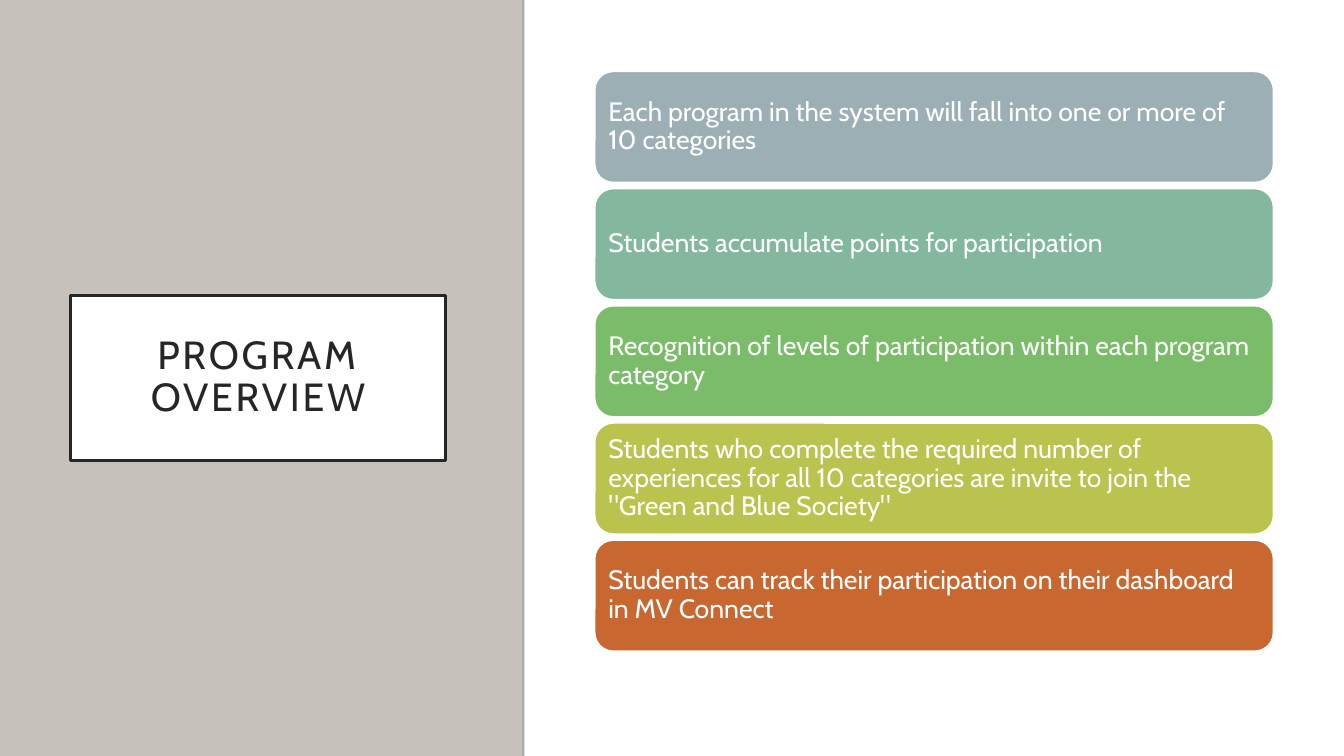
from pptx import Presentation
from pptx.dml.color import RGBColor
from pptx.enum.shapes import MSO_SHAPE as Shape
from pptx.enum.text import MSO_ANCHOR as Anchor, PP_ALIGN as Align
from pptx.util import Inches, Pt

TITLE = "PROGRAM OVERVIEW"
POINTS = [
    ("Each program in the system will fall into one or more of 10 categories", "9BAFB5"),
    ("Students accumulate points for participation", "83B79E"),
    ("Recognition of levels of participation within each program category", "7ABC69"),
    ("Students who complete the required number of experiences for all 10 categories "
     "are invite to join the \"Green and Blue Society\"", "BAC34D"),
    ("Students can track their participation on their dashboard in MV Connect", "C96731"),
]
FONT = "Cabin"
WHITE, INK, TAUPE, SLATE = "FFFFFF", "262626", "C6C1BA", "9BAFB5"

WIDTH, HEIGHT = 13.33, 7.5
SIDE_WIDTH, MAIN_LEFT = 5.18, 5.2
CARD_LEFT, CARD_TOP, CARD_WIDTH, CARD_HEIGHT = 5.9, 0.71, 6.73, 1.1
CARD_STEP = 1.1625


def color(value):
    return RGBColor.from_string(value)


def add_box(slide, kind, place, fill, line=None, line_width=1):
    box = slide.shapes.add_shape(kind, *(Inches(length) for length in place))
    box.shadow.inherit = False
    box.fill.solid()
    box.fill.fore_color.rgb = color(fill)
    if line:
        box.line.color.rgb = color(line)
        box.line.width = Pt(line_width)
    else:
        box.line.fill.background()
    return box


def write(box, text, size, ink, align, inset):
    """Fill the box with one middle-anchored paragraph and return its run."""
    frame = box.text_frame
    frame.word_wrap = True
    frame.vertical_anchor = Anchor.MIDDLE
    frame.margin_left = frame.margin_right = Inches(inset)
    frame.margin_top = frame.margin_bottom = Inches(inset)
    para = frame.paragraphs[0]
    para.alignment = align
    para.line_spacing = 0.9
    span = para.add_run()
    span.text = text
    span.font.name = FONT
    span.font.size = Pt(size)
    span.font.color.rgb = color(ink)
    return span


def main():
    deck = Presentation()
    deck.slide_width, deck.slide_height = Inches(WIDTH), Inches(HEIGHT)
    slide = deck.slides.add_slide(deck.slide_layouts[6])

    panels = [
        (0, WIDTH / 2, SLATE),
        (0, SIDE_WIDTH, TAUPE),
        (MAIN_LEFT, WIDTH - MAIN_LEFT, WHITE),
    ]
    for left, width, fill in panels:
        add_box(slide, Shape.RECTANGLE, (left, 0, width, HEIGHT), fill)

    title_box = add_box(slide, Shape.RECTANGLE, (0.7, 2.93, 3.72, 1.64), WHITE, INK, 2.5)
    title = write(title_box, TITLE, 28, INK, Align.CENTER, 0.2)
    title.font._element.set("spc", "200")

    for row, (text, fill) in enumerate(POINTS):
        place = (CARD_LEFT, CARD_TOP + row * CARD_STEP, CARD_WIDTH, CARD_HEIGHT)
        card = add_box(slide, Shape.ROUNDED_RECTANGLE, place, fill, WHITE)
        write(card, text, 19, WHITE, Align.LEFT, 0.08)

    deck.save("out.pptx")


if __name__ == "__main__":
    main()
